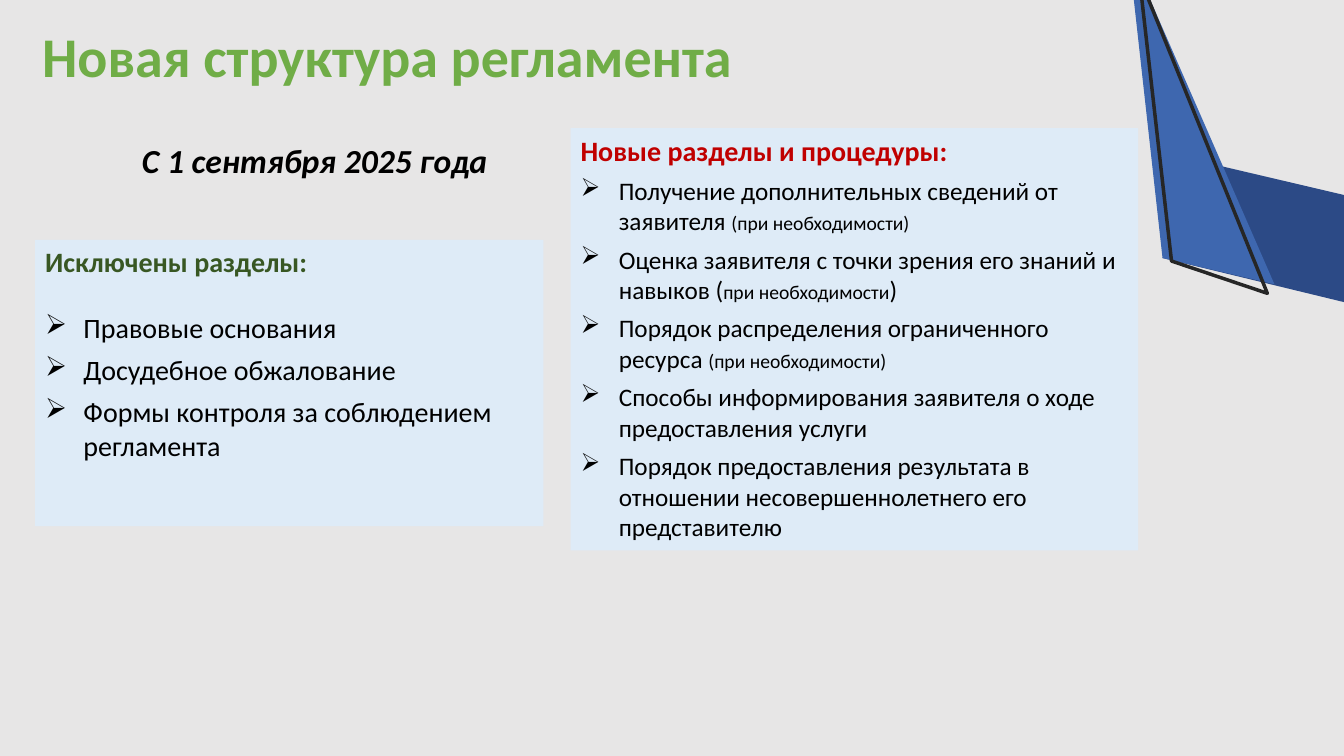
from lxml import etree
from pptx import Presentation
from pptx import util as u
from pptx.dml.color import RGBColor
from pptx.enum import shapes, text
from pptx.oxml.ns import qn

GREEN, DARK_GREEN, RED = "70AD47", "385723", "C00000"
BLACK, WHITE, PANEL_BLUE = "000000", "FFFFFF", "DEEBF7"
INDENT = u.Inches(0.38)
IF_NEEDED = "при необходимости"

# Each section is a list of (words, size) runs
EXCLUDED = [
    [("Правовые основания", 20)],
    [("Досудебное обжалование", 20)],
    [("Формы контроля за соблюдением регламента", 20)],
]
ADDED = [
    [("Получение дополнительных сведений от заявителя ", 18), (f"({IF_NEEDED})", 14)],
    [("Оценка заявителя с точки зрения его знаний и навыков (", 18),
     (IF_NEEDED, 14), (")", 18)],
    [("Порядок распределения ограниченного ресурса ", 18), (f"({IF_NEEDED})", 14)],
    [("Способы информирования заявителя о ходе предоставления услуги", 18)],
    [("Порядок предоставления результата в отношении несовершеннолетнего "
      "его представителю", 18)],
]

# Corner ribbon: corner points in inches
RIBBON_TAIL = [(14.63, 2.24), (12.12, 1.65), (11.53, 2.56), (14.33, 3.24)]
RIBBON_FOLD = [(11.53, 2.56), (11.19, -0.5), (12.64, 2.82)]
RIBBON_OUTLINE = [(11.62, 2.59), (11.3, -0.23), (12.57, 2.91)]


def rgb(value):
    return RGBColor.from_string(value)


def add_run(paragraph, words, size=20, color=BLACK, bold=False, italic=False, outline=None):
    run = paragraph.add_run()
    run.text = words
    font = run.font
    font.name, font.size = "Calibri", u.Pt(size)
    font.bold, font.italic = bold, italic
    font.color.rgb = rgb(color)
    if outline:
        line = etree.Element(qn("a:ln"), w=str(u.Pt(0.75)))
        fill = etree.SubElement(line, qn("a:solidFill"))
        etree.SubElement(fill, qn("a:srgbClr"), val=outline)
        font._element.insert(0, line)


def add_bullet(paragraph, runs, space_before):
    paragraph.alignment = text.PP_ALIGN.LEFT
    paragraph.space_before = u.Pt(space_before)
    properties = paragraph._p.get_or_add_pPr()
    properties.set("marL", str(INDENT))
    properties.set("indent", str(-INDENT))
    etree.SubElement(properties, qn("a:buChar"), char="➢")
    for words, size in runs:
        add_run(paragraph, words, size=size)


def add_label(slide, box, words, line_spacing=1.0, **style):
    label = slide.shapes.add_textbox(*map(u.Inches, box))
    label.text_frame.word_wrap = True
    paragraph = label.text_frame.paragraphs[0]
    paragraph.line_spacing = line_spacing
    add_run(paragraph, words, **style)


def add_panel(slide, box, heading, color, sections, first_gap=6):
    panel = slide.shapes.add_shape(shapes.MSO_SHAPE.RECTANGLE, *map(u.Inches, box))
    panel.shadow.inherit = False
    panel.fill.solid()
    panel.fill.fore_color.rgb = rgb(PANEL_BLUE)
    panel.line.fill.background()
    frame = panel.text_frame
    frame.word_wrap = True
    frame.vertical_anchor = text.MSO_ANCHOR.TOP
    frame.paragraphs[0].alignment = text.PP_ALIGN.LEFT
    add_run(frame.paragraphs[0], heading, color=color, bold=True)
    for index, runs in enumerate(sections):
        add_bullet(frame.add_paragraph(), runs, 6 if index else first_gap)


def add_ribbon_part(slide, points, fill=None, line=None):
    corners = [(u.Inches(x), u.Inches(y)) for x, y in points]
    builder = slide.shapes.build_freeform(*corners[0])
    builder.add_line_segments(corners[1:], close=True)
    part = builder.convert_to_shape()
    part.shadow.inherit = False
    if fill:
        part.fill.solid()
        part.fill.fore_color.rgb = rgb(fill)
    else:
        part.fill.background()
    if line:
        part.line.color.rgb = rgb(line)
        part.line.width = u.Pt(2.5)
    else:
        part.line.fill.background()


def main():
    deck = Presentation()
    deck.slide_width, deck.slide_height = u.Inches(13.33), u.Inches(7.5)
    slide = deck.slides.add_slide(deck.slide_layouts[6])
    slide.background.fill.solid()
    slide.background.fill.fore_color.rgb = rgb("E7E6E6")

    # Corner ribbon
    add_ribbon_part(slide, RIBBON_TAIL, fill="2C4A86")
    add_ribbon_part(slide, RIBBON_FOLD, fill="3E67AF")
    add_ribbon_part(slide, RIBBON_OUTLINE, line="262626")

    # Title and start date
    add_label(slide, (0.32, 0.24, 10.51, 0.99), "Новая структура регламента",
              line_spacing=0.9, size=40, color=GREEN, bold=True, outline=WHITE)
    add_label(slide, (1.31, 1.34, 3.98, 0.5), "С 1 сентября 2025 года",
              size=24, bold=True, italic=True)

    # Excluded and new sections
    add_panel(slide, (0.35, 2.38, 5.04, 2.84), "Исключены разделы:",
              DARK_GREEN, EXCLUDED, first_gap=23)
    add_panel(slide, (5.66, 1.27, 5.63, 4.19), "Новые разделы и процедуры:", RED, ADDED)

    deck.save("out.pptx")


if __name__ == "__main__":
    main()
